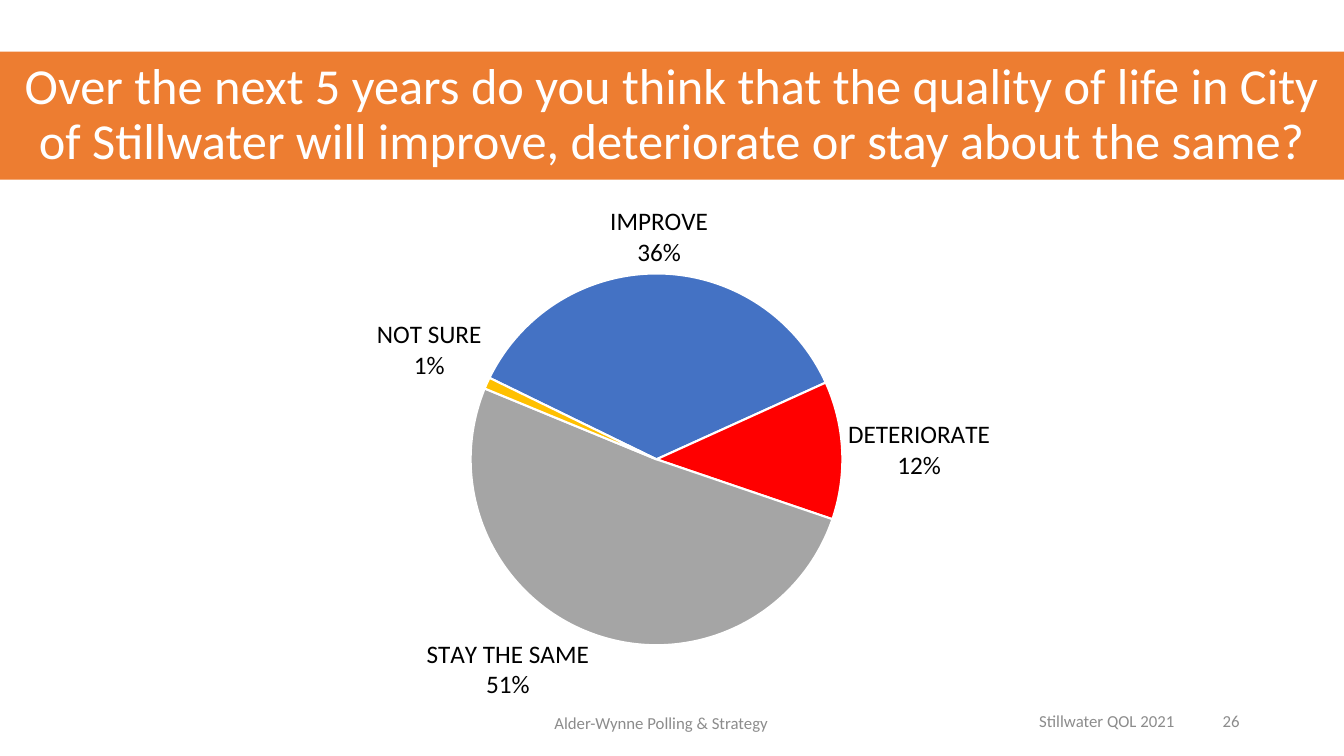
from lxml import etree
from pptx import Presentation
from pptx.chart.data import CategoryChartData
from pptx.dml.color import RGBColor
from pptx.enum.chart import XL_CHART_TYPE, XL_LABEL_POSITION
from pptx.enum.text import MSO_ANCHOR, MSO_AUTO_SIZE, PP_ALIGN
from pptx.oxml import parse_xml
from pptx.oxml.ns import nsdecls, qn
from pptx.util import Cm, Pt

HUES = {
    "band": "ED7D31", "white": "FFFFFF", "black": "000000", "foot": "8C8C8C",
    "blue": "4472C4", "red": "FF0000", "gray": "A5A5A5", "gold": "FFC000",
}


def hue(name):
    return RGBColor.from_string(HUES[name])


def write(shape, text, size, color, align):
    frame = shape.text_frame
    frame.word_wrap = True
    frame.auto_size = MSO_AUTO_SIZE.NONE
    frame.vertical_anchor = MSO_ANCHOR.MIDDLE
    para = frame.paragraphs[0]
    para.alignment = align
    run = para.add_run()
    run.text = text
    run.font.size = Pt(size)
    run.font.name = "Calibri"
    run.font.color.rgb = hue(color)
    return para


deck = Presentation()
deck.slide_width, deck.slide_height = Cm(33.87), Cm(19.05)
slide = deck.slides.add_slide(deck.slide_layouts[5])

# Title band
title = slide.shapes.title
title.left, title.top, title.width, title.height = Cm(0), Cm(1.3), Cm(33.87), Cm(3.23)
title.fill.solid()
title.fill.fore_color.rgb = hue("band")
para = write(title, "Over the next 5 years do you think that the quality of life in City "
             "of Stillwater will improve, deteriorate or stay about the same?",
             36, "white", PP_ALIGN.CENTER)
para.line_spacing = 0.9

# Footer: survey name and page number, set apart by a tab stop
page = slide.shapes.add_textbox(Cm(23.93), Cm(17.65), Cm(7.62), Cm(1.02))
page.text_frame.margin_left = Cm(2.26)
para = write(page, "Stillwater QOL 2021\t26", 12, "foot", PP_ALIGN.LEFT)
stops = etree.SubElement(para._p.get_or_add_pPr(), qn("a:tabLst"))
etree.SubElement(stops, qn("a:tab"), pos=str(Cm(4.62)), algn="l")

firm = slide.shapes.add_textbox(Cm(10.95), Cm(17.65), Cm(11.43), Cm(1.14))
write(firm, "Alder-Wynne Polling & Strategy", 12, "foot", PP_ALIGN.CENTER)

# Pie chart
data = CategoryChartData(number_format="0%")
data.categories = ["IMPROVE", "DETERIORATE", "STAY THE SAME", "NOT SURE"]
data.add_series("Series 1", [0.36, 0.12, 0.51, 0.01])
chart = slide.shapes.add_chart(XL_CHART_TYPE.PIE, Cm(0.74), Cm(2.77),
                               Cm(30.28), Cm(14.99), data).chart
chart.has_title = False
chart.has_legend = False
chart.font.name = "Calibri"
chart.font.size = Pt(10)
chart.font.bold = True
chart.font.color.rgb = hue("black")
plot = chart.plots[0]
plot.vary_by_categories = True

# Slices
for i, name in enumerate(["blue", "red", "gray", "gold"]):
    look = plot.series[0].points[i].format
    look.fill.solid()
    look.fill.fore_color.rgb = hue(name)
    look.line.color.rgb = hue("white")
    look.line.width = Pt(1.5)

# Labels: category above value
plot.has_data_labels = True
labels = plot.data_labels
labels.show_category_name = True
labels.show_value = True
labels.show_percentage = False
labels.number_format = "0%"
labels.number_format_is_linked = False
labels.position = XL_LABEL_POSITION.OUTSIDE_END
labels.font.name = "Calibri"
labels.font.size = Pt(18)
labels.font.bold = False
labels.font.color.rgb = hue("black")
split = etree.Element(qn("c:separator"))
split.text = "\n"
flags = labels._element
last = [tag for tag in flags if tag.tag.split("}")[1].startswith("show")
        and tag.tag != qn("c:showLeaderLines")][-1]
last.addnext(split)

# First slice angle
pie = chart._chartSpace.find(".//" + qn("c:pieChart"))
for old in pie.findall(qn("c:firstSliceAng")):
    pie.remove(old)
etree.SubElement(pie, qn("c:firstSliceAng"), val="296")

# Plot area placement
area = chart._chartSpace.find(".//" + qn("c:plotArea"))
for old in area.findall(qn("c:layout")):
    area.remove(old)
rules = [("layoutTarget", "inner"), ("xMode", "edge"), ("yMode", "edge"),
         ("x", 0.32), ("y", 0.275), ("w", 0.404), ("h", 0.625)]
body = "".join(f'<c:{key} val="{val}"/>' for key, val in rules)
area.insert(0, parse_xml(f'<c:layout {nsdecls("c")}><c:manualLayout>{body}'
                         '</c:manualLayout></c:layout>'))

deck.save("out.pptx")
